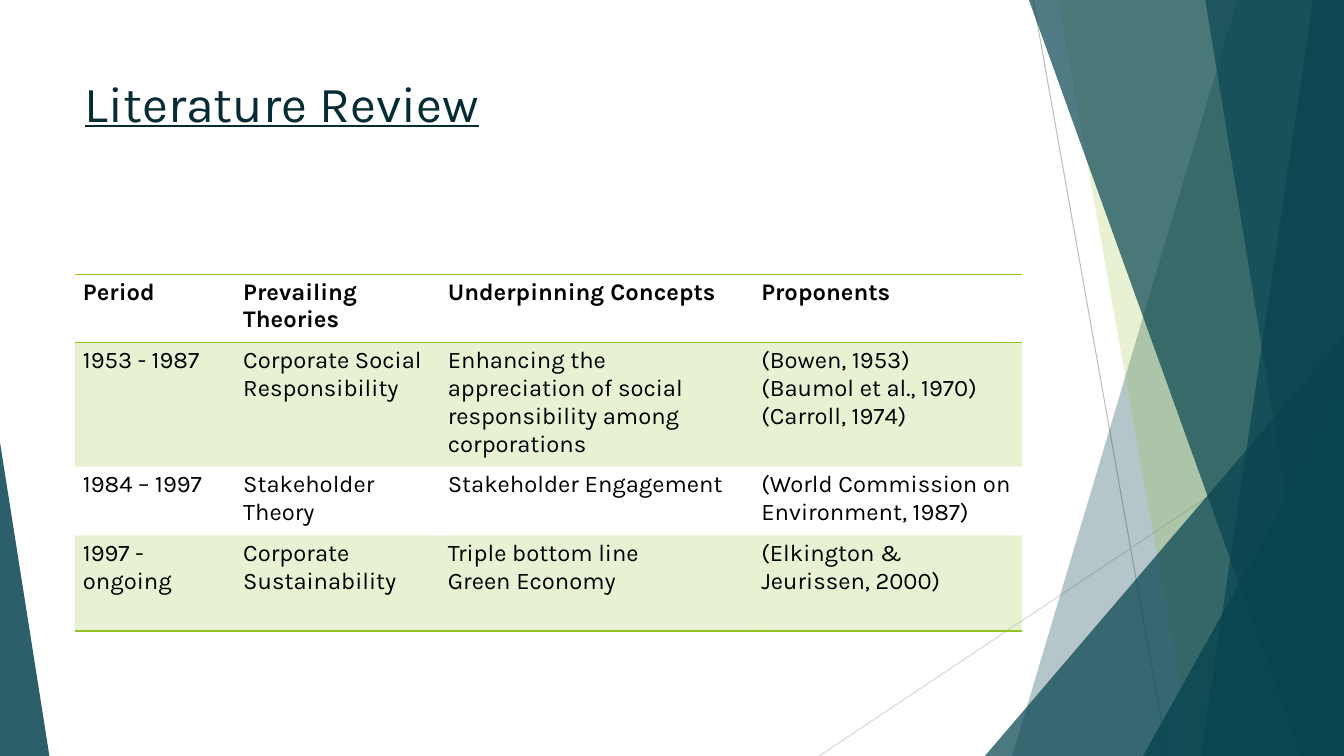
import dataclasses

import lxml.etree
import pptx
import pptx.dml.color
import pptx.enum.shapes
import pptx.enum.text
import pptx.oxml
import pptx.oxml.ns
import pptx.util

Pt = pptx.util.Pt
qn = pptx.oxml.ns.qn


@dataclasses.dataclass(frozen=True)
class Theme:
    """Colours, font and type sizes of the deck."""
    font: str = "Karla"
    teal: str = "084450"
    green: str = "90C226"
    heading: str = "052C34"
    text: str = "000000"
    ray: str = "BFBFBF"
    pale_ray: str = "D9D9D9"
    heading_size: float = 36
    table_size: float = 17
    ray_width: float = 0.75
    rule_width: float = 1


@dataclasses.dataclass(frozen=True)
class Box:
    """A region of the slide in points."""
    left: float
    top: float
    width: float
    height: float

    @property
    def right(self):
        """Right edge."""
        return self.left + self.width

    @property
    def bottom(self):
        """Bottom edge."""
        return self.top + self.height


THEME = Theme()
SLIDE = Box(0, 0, 960, 540)
HEADING = Box(53.3, 48.2, 676.8, 103.7)
REVIEW = Box(53.3, 195.8, 676.8, 255)
COLUMN_SHARES = (1.59, 2.03, 3.11, 2.67)
ROW_SHARES = (0.68, 1.23, 0.68, 0.95)
THEORIES = (
    ("Period", "Prevailing Theories", "Underpinning Concepts", "Proponents"),
    ("1953 - 1987", "Corporate Social Responsibility",
     "Enhancing the appreciation of social responsibility among corporations",
     "(Bowen, 1953)\n(Baumol et al., 1970)\n(Carroll, 1974)"),
    ("1984 – 1997", "Stakeholder Theory", "Stakeholder Engagement",
     "(World Commission on Environment, 1987)"),
    ("1997 - ongoing", "Corporate Sustainability",
     "Triple bottom line\nGreen Economy", "(Elkington & Jeurissen, 2000)"),
)
NO_STYLE = "{2D5ABB26-0587-4C30-8999-92F81FD0307C}"


def rgb(colour):
    """Turn a hex string into a colour."""
    return pptx.dml.color.RGBColor.from_string(colour)


def tint(fill, colour, opacity):
    """Give a fill a colour with an opacity in percent."""
    fill.solid()
    fill.fore_color.rgb = rgb(colour)
    solid = fill._xPr.find(qn("a:solidFill"))
    alpha = lxml.etree.SubElement(solid[0], qn("a:alpha"))
    alpha.set("val", str(opacity * 1000))


def style_run(run, size, colour, bold=False, underline=False):
    """Format one run."""
    run.font.name = THEME.font
    run.font.size = Pt(size)
    run.font.color.rgb = rgb(colour)
    run.font.bold = bold
    run.font.underline = underline


def add_ray(slide, start, end, colour):
    """Draw a thin background line."""
    ray = slide.shapes.add_connector(
        pptx.enum.shapes.MSO_CONNECTOR.STRAIGHT, *map(Pt, start + end))
    ray.line.color.rgb = rgb(colour)
    ray.line.width = Pt(THEME.ray_width)
    lxml.etree.SubElement(ray._element.spPr, qn("a:effectLst"))


def finish_facet(facet, colour, opacity):
    """Make a facet translucent, without outline or shadow."""
    facet.shadow.inherit = False
    facet.line.fill.background()
    tint(facet.fill, colour, opacity)


def add_shard(slide, box, top_x, bottom_x, opacity, colour=THEME.teal):
    """Fill the box to the right of a slanted full-height edge."""
    corners = [(top_x, box.top), (box.right, box.top),
               (box.right, box.bottom), (bottom_x, box.bottom)]
    outline = [(Pt(x), Pt(y)) for x, y in corners]
    builder = slide.shapes.build_freeform(*outline[0], scale=1.0)
    builder.add_line_segments(outline[1:], close=True)
    finish_facet(builder.convert_to_shape(), colour, opacity)


def add_wedge(slide, box, width, height, opacity, on_right=True):
    """Set a right triangle in a bottom corner of the box."""
    left = box.right - width if on_right else box.left
    wedge = slide.shapes.add_shape(
        pptx.enum.shapes.MSO_SHAPE.ISOSCELES_TRIANGLE,
        Pt(left), Pt(box.bottom - height), Pt(width), Pt(height))
    wedge.adjustments[0] = 1.0 if on_right else 0.0
    finish_facet(wedge, THEME.teal, opacity)


def add_backdrop(slide, box):
    """Layer the rays and facets along the slide edges."""
    add_ray(slide, (box.right - 222, box.top), (box.right - 126, box.bottom), THEME.ray)
    add_ray(slide, (box.right, box.top + 290), (box.right - 375, box.bottom), THEME.pale_ray)
    add_shard(slide, box, box.right - 76, box.right - 237, 30)
    add_shard(slide, box, box.right - 204, box.right - 108, 20, THEME.green)
    add_wedge(slide, box, 256.5, 300, 72)
    add_shard(slide, box, box.right - 225, box.right - 30.5, 70)
    add_shard(slide, box, box.right - 22, box.right - 102, 70)
    add_shard(slide, box, box.right - 99, box.right - 11, 65)
    add_wedge(slide, box, 143.5, 257, 80)
    add_wedge(slide, box, 35.3, 224, 85, on_right=False)


def add_heading(slide, box, wording):
    """Place the underlined slide title."""
    heading = slide.shapes.title
    heading.left, heading.top = Pt(box.left), Pt(box.top)
    heading.width, heading.height = Pt(box.width), Pt(box.height)
    frame = heading.text_frame
    frame.text = wording
    frame.word_wrap = True
    frame.auto_size = pptx.enum.text.MSO_AUTO_SIZE.NONE
    frame.vertical_anchor = pptx.enum.text.MSO_ANCHOR.TOP
    frame.paragraphs[0].alignment = pptx.enum.text.PP_ALIGN.LEFT
    style_run(frame.paragraphs[0].runs[0], THEME.heading_size, THEME.heading, underline=True)


def add_rules(cell, sides):
    """Draw cell borders on the given sides, in schema order."""
    for position, side in enumerate(sides):
        rule = pptx.oxml.parse_xml(
            f'<a:{side} xmlns:a="http://schemas.openxmlformats.org/drawingml/2006/main" '
            f'w="{Pt(THEME.rule_width)}"><a:solidFill><a:srgbClr val="{THEME.green}"/>'
            f'</a:solidFill></a:{side}>')
        cell._tc.get_or_add_tcPr().insert(position, rule)


def fill_cell(cell, wording, row, last_row):
    """Write and format one cell of the review."""
    cell.text_frame.text = wording
    cell.margin_left = cell.margin_right = Pt(6)
    cell.margin_top = cell.margin_bottom = Pt(3)
    for paragraph in cell.text_frame.paragraphs:
        for run in paragraph.runs:
            style_run(run, THEME.table_size, THEME.text, bold=row == 0)
    if row % 2:
        tint(cell.fill, THEME.green, 20)
    else:
        cell.fill.background()
    if row == 0:
        add_rules(cell, ("lnT", "lnB"))
    elif row == last_row:
        add_rules(cell, ("lnB",))


def add_review(slide, box, theories):
    """Place the table of theories by period."""
    review = slide.shapes.add_table(
        len(theories), len(theories[0]), Pt(box.left), Pt(box.top),
        Pt(box.width), Pt(box.height)).table
    review.first_row = review.horz_banding = False
    review._tbl.tblPr.find(qn("a:tableStyleId")).text = NO_STYLE
    for column, share in zip(review.columns, COLUMN_SHARES):
        column.width = Pt(box.width * share / sum(COLUMN_SHARES))
    for row, share in zip(review.rows, ROW_SHARES):
        row.height = Pt(box.height * share / sum(ROW_SHARES))
    for r, entries in enumerate(theories):
        for c, wording in enumerate(entries):
            fill_cell(review.cell(r, c), wording, r, len(theories) - 1)


def main():
    """Build and save the deck."""
    deck = pptx.Presentation()
    deck.slide_width, deck.slide_height = Pt(SLIDE.width), Pt(SLIDE.height)
    slide = deck.slides.add_slide(deck.slide_layouts[5])
    add_backdrop(slide, SLIDE)
    add_heading(slide, HEADING, "Literature Review")
    add_review(slide, REVIEW, THEORIES)
    deck.save("out.pptx")


if __name__ == "__main__":
    main()
